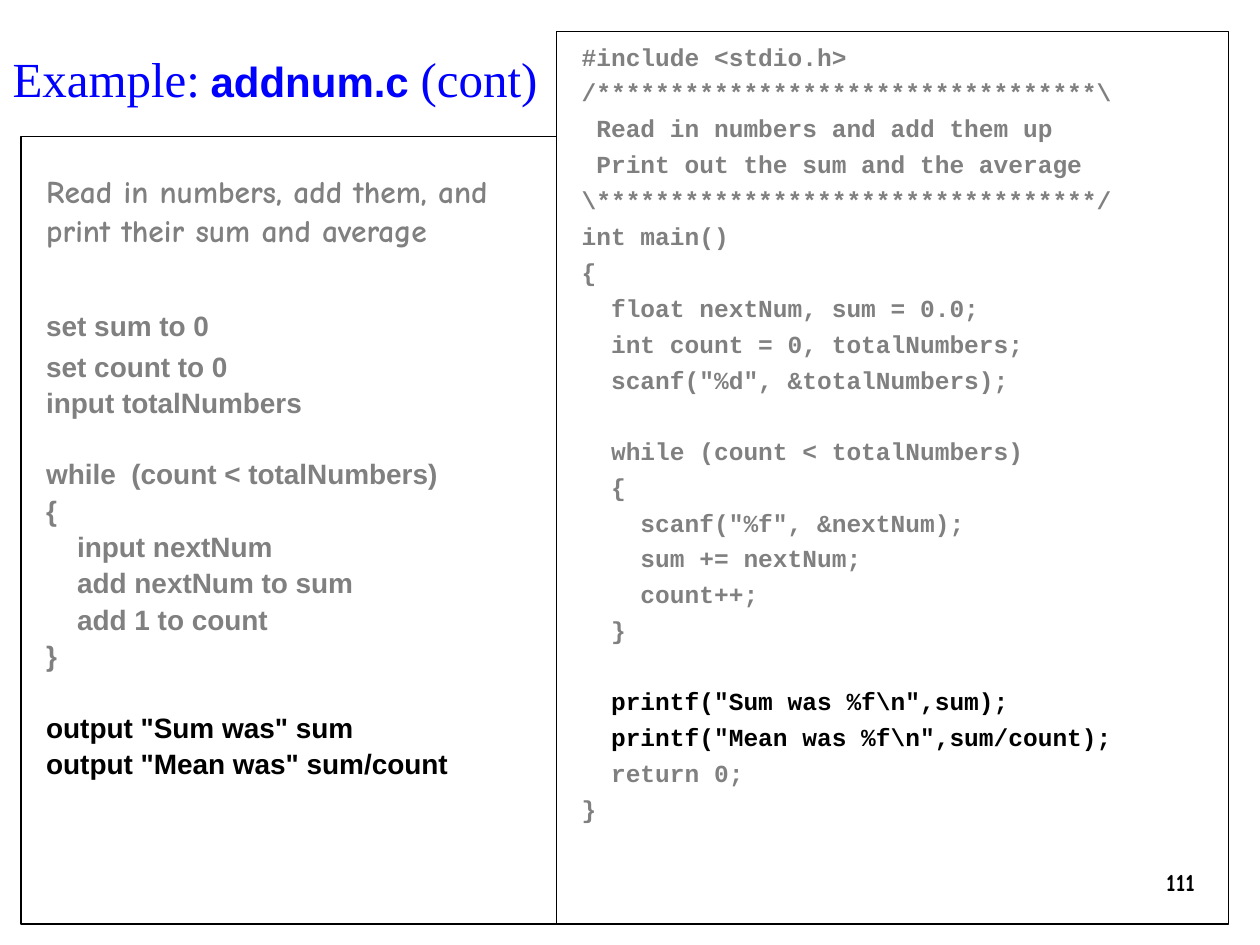
from lxml import etree
from pptx import Presentation
from pptx import util as u
from pptx.dml.color import RGBColor
from pptx.enum import shapes, text
from pptx.oxml.ns import qn

COLORS = {"ink": "000000", "muted": "808080", "title": "0000FF", "paper": "FFFFFF"}
W, H = u.Inches(10), u.Inches(7.5)
COL, ROW = W / 120, H / 90  # grid of 1/12 inch squares


def place(sp, left, top, width, height, inset_left=0.1, inset_top=0.05):
    """Put a shape on the grid and give its frame top-anchored wrapped text."""
    sp.left, sp.width = round(left * COL), round(width * COL)
    sp.top, sp.height = round(top * ROW), round(height * ROW)
    tf = sp.text_frame
    tf.word_wrap = True
    tf.auto_size = text.MSO_AUTO_SIZE.NONE
    tf.vertical_anchor = text.MSO_ANCHOR.TOP
    tf.margin_left, tf.margin_right = u.Inches(inset_left), u.Inches(0.1)
    tf.margin_top, tf.margin_bottom = u.Inches(inset_top), u.Inches(0.05)
    return tf


def style(r, font, size, color, bold=True):
    r.font.name, r.font.size, r.font.bold = font, u.Pt(size), bold
    r.font.color.rgb = RGBColor.from_string(COLORS[color])


prs = Presentation()
prs.slide_width, prs.slide_height = W, H
s = prs.slides.add_slide(prs.slide_layouts[1])
title, body = s.placeholders

# Title
p = place(title, 0, 4, 52.5, 6.8).paragraphs[0]
p.alignment = text.PP_ALIGN.LEFT
for words, font, size, bold in [
    ("Example:", "Times New Roman", 28, False),
    (" ", "Times New Roman", 24, False),
    ("addnum.c ", "Arial", 24, True),
    ("(cont)", "Times New Roman", 28, False),
]:
    r = p.add_run()
    r.text = words
    style(r, font, size, "title", bold)

# Each line: text, space before in points, font, size, colour
intro = [
    ("Read in numbers, add them, and", 0, "Comic Neue", 18, "muted"),
    ("print their sum and average", 1, "Comic Neue", 18, "muted"),
]
steps = [
    ("set sum to 0", 34),
    ("set count to 0", 4),
    ("input totalNumbers", 1.6),
    ("while  (count < totalNumbers)", 21.6),
    ("{", 1.6),
    ("    input nextNum", 1.6),
    ("    add nextNum to sum", 1.6),
    ("    add 1 to count", 1.6),
    ("}", 1.6),
    ('output "Sum was" sum', 21.6),
    ('output "Mean was" sum/count', 1.6),
]
pseudocode = intro + [
    (line, gap, "Arial", 16, "ink" if line.startswith("output") else "muted")
    for line, gap in steps
]

program = r'''#include <stdio.h>
/**********************************\
 Read in numbers and add them up
 Print out the sum and the average
\**********************************/
int main()
{
  float nextNum, sum = 0.0;
  int count = 0, totalNumbers;
  scanf("%d", &totalNumbers);

  while (count < totalNumbers)
  {
    scanf("%f", &nextNum);
    sum += nextNum;
    count++;
  }

  printf("Sum was %f\n",sum);
  printf("Mean was %f\n",sum/count);
  return 0;
}'''
code = []
for block in program.split("\n\n"):
    for i, line in enumerate(block.split("\n")):
        gap = 3.75 if i else 23.4 if code else 0
        color = "ink" if "printf" in line else "muted"
        code.append((line, gap, "Courier New", 14, color))

# Two framed panels side by side
panel = s.shapes.add_shape(shapes.MSO_SHAPE.RECTANGLE, 0, 0, 0, 0)
panel.shadow.inherit = False
panel.fill.background()
for sp, box, inset_top, lines in [
    (body, (2, 13, 51, 75), 0.28, pseudocode),
    (panel, (53, 3, 64, 85), 0.08, code),
]:
    sp.line.color.rgb = RGBColor.from_string(COLORS["ink"])
    sp.line.width = u.Pt(0.75)
    tf = place(sp, *box, inset_left=0.2, inset_top=inset_top)
    tf.text = "\n".join(line[0] for line in lines)
    for p, (_, gap, font, size, color) in zip(tf.paragraphs, lines):
        p.alignment = text.PP_ALIGN.LEFT
        p.space_before = u.Pt(gap)
        pPr = p._p.get_or_add_pPr()
        pPr.set("marL", "0")
        pPr.set("indent", "0")
        etree.SubElement(pPr, qn("a:buNone"))
        style(p.runs[0], font, size, color)

# Page number
tf = place(s.shapes.add_textbox(0, 0, 0, 0), 100, 82, 15, 6)
tf.text = "111"
tf.paragraphs[0].alignment = text.PP_ALIGN.RIGHT
style(tf.paragraphs[0].runs[0], "Comic Neue", 14, "ink")

prs.save("out.pptx")
